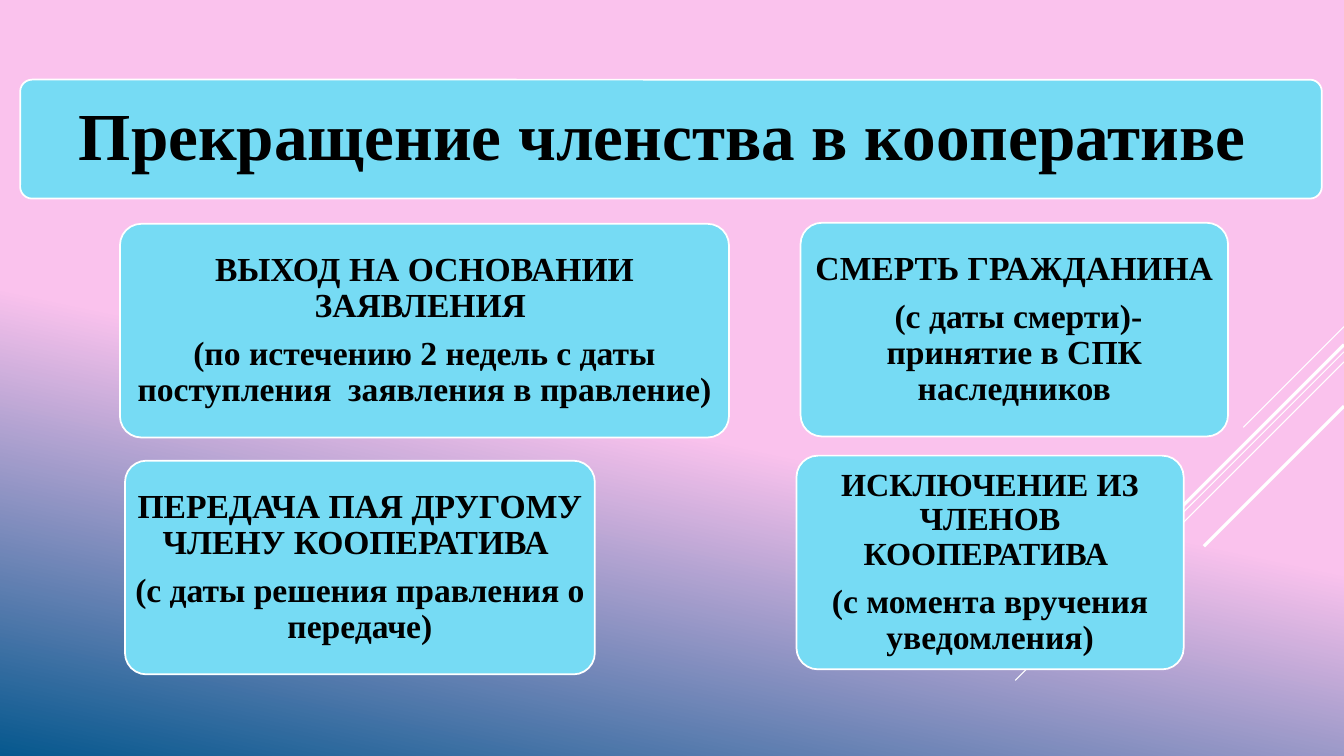
from lxml import etree
from pptx import Presentation
from pptx.dml.color import RGBColor
from pptx.enum.shapes import MSO_CONNECTOR, MSO_SHAPE
from pptx.enum.text import MSO_ANCHOR, PP_ALIGN
from pptx.oxml.ns import qn
from pptx.util import Inches, Pt

WIDTH, HEIGHT = 13.33, 7.5
FONT = "Times New Roman"
COLORS = {"pink": "FAC2ED", "navy": "06588E", "card": "76DBF4",
          "outline": "FFFFFF", "text": "000000"}
CARD_HEIGHT = 2.12
CORNER = 0.1

# Start height on the right edge, run to the lower left, line width
RAYS = [(3.24, 1.0, 0.75), (3.49, 3.26, 0.75), (3.59, 2.07, 0.75),
        (3.42, 1.91, 2.25), (4.03, 1.39, 2.25)]

# Left, top, width, then paragraphs as (text, size)
REASONS = [
    (1.19, 2.22, 6.04,
     [("ВЫХОД НА ОСНОВАНИИ ЗАЯВЛЕНИЯ ", 24),
      ("(по истечению 2 недель с даты поступления  заявления в правление)", 24)]),
    (1.24, 4.57, 4.66,
     [("ПЕРЕДАЧА ПАЯ ДРУГОМУ ЧЛЕНУ КООПЕРАТИВА ", 24),
      ("(с даты решения правления о передаче)", 24)]),
    (7.9, 4.52, 3.84,
     [("ИСКЛЮЧЕНИЕ ИЗ ЧЛЕНОВ КООПЕРАТИВА ", 23),
      ("(с момента вручения уведомления)", 24)]),
    (7.94, 2.21, 4.24,
     [("СМЕРТЬ ГРАЖДАНИНА", 24),
      (" (с даты смерти)- принятие в СПК наследников", 24)]),
]


def color(name):
    return RGBColor.from_string(COLORS[name])


def paint_background(slide):
    fill = slide.background.fill
    fill.gradient()
    fill.gradient_angle = 258
    for stop, name, position in zip(fill.gradient_stops, ("pink", "navy"), (0.55, 1)):
        stop.color.rgb = color(name)
        stop.position = position


def draw_rays(slide):
    """Diagonal lines running down from the right edge at 45 degrees."""
    for top, run, weight in RAYS:
        ray = slide.shapes.add_connector(
            MSO_CONNECTOR.STRAIGHT, Inches(WIDTH), Inches(top),
            Inches(WIDTH - run), Inches(top + run))
        ray.line.color.rgb = color("outline")
        ray.line.width = Pt(weight)
        etree.SubElement(ray._element.spPr, qn("a:effectLst"))


def draw_card(slide, left, top, width, height, paragraphs, inset):
    """Rounded card with centred bold text."""
    card = slide.shapes.add_shape(
        MSO_SHAPE.ROUNDED_RECTANGLE, *map(Inches, (left, top, width, height)))
    card.adjustments[0] = CORNER
    card.shadow.inherit = False
    card.fill.solid()
    card.fill.fore_color.rgb = color("card")
    card.line.color.rgb = color("outline")
    card.line.width = Pt(1.25)

    frame = card.text_frame
    frame.word_wrap = True
    frame.vertical_anchor = MSO_ANCHOR.MIDDLE
    frame.margin_left = frame.margin_right = Inches(inset)
    frame.margin_top = frame.margin_bottom = Inches(inset)
    frame.text = "\n".join(text for text, _ in paragraphs)
    for paragraph, (_, size) in zip(frame.paragraphs, paragraphs):
        paragraph.alignment = PP_ALIGN.CENTER
        paragraph.line_spacing = 0.9
        paragraph.space_after = Pt(0.35 * size)
        for run in paragraph.runs:
            run.font.name = FONT
            run.font.size = Pt(size)
            run.font.bold = True
            run.font.color.rgb = color("text")


def build_slide(prs):
    slide = prs.slides.add_slide(prs.slide_layouts[6])
    paint_background(slide)
    draw_rays(slide)
    # Title banner
    draw_card(slide, 0.2, 0.79, 12.91, 1.18,
              [("Прекращение членства в кооперативе ", 48)], 0.17)
    # Reasons for ending membership
    for left, top, width, paragraphs in REASONS:
        draw_card(slide, left, top, width, CARD_HEIGHT, paragraphs, 0.03)


def main():
    prs = Presentation()
    prs.slide_width, prs.slide_height = Inches(WIDTH), Inches(HEIGHT)
    build_slide(prs)
    prs.save("out.pptx")


if __name__ == "__main__":
    main()
